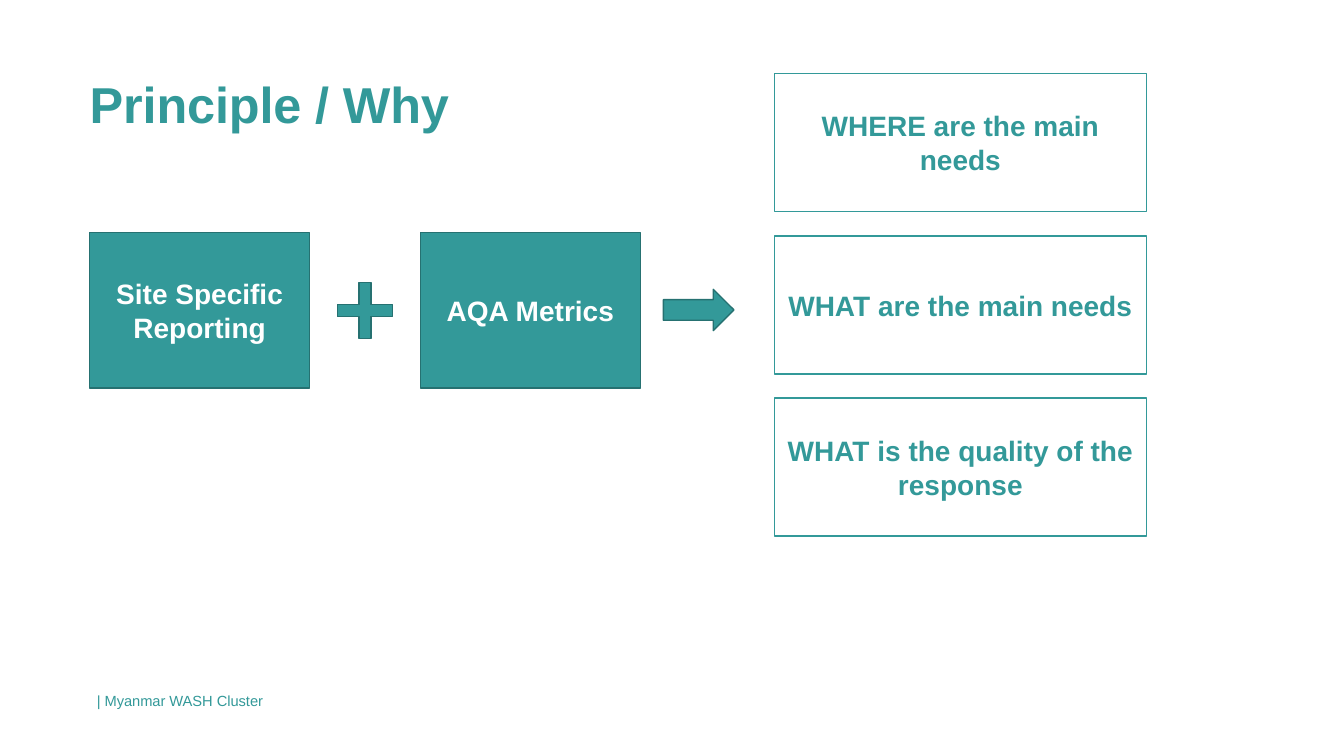
from pptx import Presentation
from pptx.dml.color import RGBColor
from pptx.enum.shapes import MSO_SHAPE as Shape
from pptx.enum.text import MSO_ANCHOR as Anchor, PP_ALIGN as Align
from pptx.util import Inches, Pt

TEAL = RGBColor(0x33, 0x99, 0x99)
DARK = RGBColor(0x26, 0x71, 0x71)
WHITE = RGBColor(0xFF, 0xFF, 0xFF)


def style(para, size, color, bold=False):
    values = {"name": "Arial", "size": Pt(size), "bold": bold}
    for key, value in values.items():
        setattr(para.font, key, value)
    para.font.color.rgb = color


def draw(slide, kind, box, fill=TEAL, edge=DARK):
    shape = slide.shapes.add_shape(kind, *map(Inches, box))
    shape.shadow.inherit = False
    shape.fill.solid()
    shape.fill.fore_color.rgb = fill
    shape.line.color.rgb = edge
    shape.line.width = Pt(1)
    return shape


def card(slide, box, text, fill=TEAL, edge=DARK, color=WHITE):
    frame = draw(slide, Shape.RECTANGLE, box, fill, edge).text_frame
    frame.word_wrap = True
    frame.vertical_anchor = Anchor.MIDDLE
    para = frame.paragraphs[0]
    para.text = text
    para.alignment = Align.CENTER
    style(para, 20, color, True)


def title(slide, box, text):
    frame = slide.shapes.add_textbox(*map(Inches, box)).text_frame
    frame.word_wrap = True
    for side in ("left", "top", "right", "bottom"):
        setattr(frame, f"margin_{side}", 0)
    para = frame.paragraphs[0]
    para.text = text
    style(para, 36, TEAL, True)
    para.runs[0].font._element.set("spc", "-10")


def inputs(slide, box):
    left, top, width, height = box
    wide, plus = 2.18, 0.55
    mid = top + height / 2
    # Two source cards at either end
    card(slide, (left, top, wide, height), "Site Specific Reporting")
    card(slide, (left + width - wide, top, wide, height), "AQA Metrics")
    # Plus sign centred between them
    spot = (left + (width - plus) / 2, mid - plus / 2, plus, plus)
    draw(slide, Shape.CROSS, spot).adjustments[0] = 0.39
    # Arrow towards the questions
    draw(slide, Shape.RIGHT_ARROW, (left + width + 0.23, mid - 0.21, 0.7, 0.41))


def outputs(slide, box, texts):
    left, top, width, height = box
    tall = 1.37
    step = (height - tall) / (len(texts) - 1)
    for row, text in enumerate(texts):
        spot = (left, top + row * step, width, tall)
        card(slide, spot, text, WHITE, TEAL, TEAL)


def footer(slide, box, text):
    table = slide.shapes.add_table(1, 2, *map(Inches, box)).table
    table.first_row = table.horz_banding = False
    for cell in table.iter_cells():
        cell.fill.solid()
        cell.fill.fore_color.rgb = WHITE
    cell = table.cell(0, 0)
    cell.margin_left = Inches(0.18)
    para = cell.text_frame.paragraphs[0]
    para.text = text
    para.line_spacing = 1.5
    style(para, 10.5, TEAL)


def main():
    deck = Presentation()
    deck.slide_width, deck.slide_height = Inches(13.33), Inches(7.5)
    slide = deck.slides.add_slide(deck.slide_layouts[6])
    footer(slide, (0.78, 6.75, 12.06, 0.59), "| Myanmar WASH Cluster")
    title(slide, (0.89, 0.73, 4.24, 0.61), "Principle / Why")
    inputs(slide, (0.89, 2.31, 5.46, 1.54))
    outputs(slide, (7.68, 0.73, 3.69, 4.59), (
        "WHERE are the main needs",
        "WHAT are the main needs",
        "WHAT is the quality of the response",
    ))
    deck.save("out.pptx")


if __name__ == "__main__":
    main()
